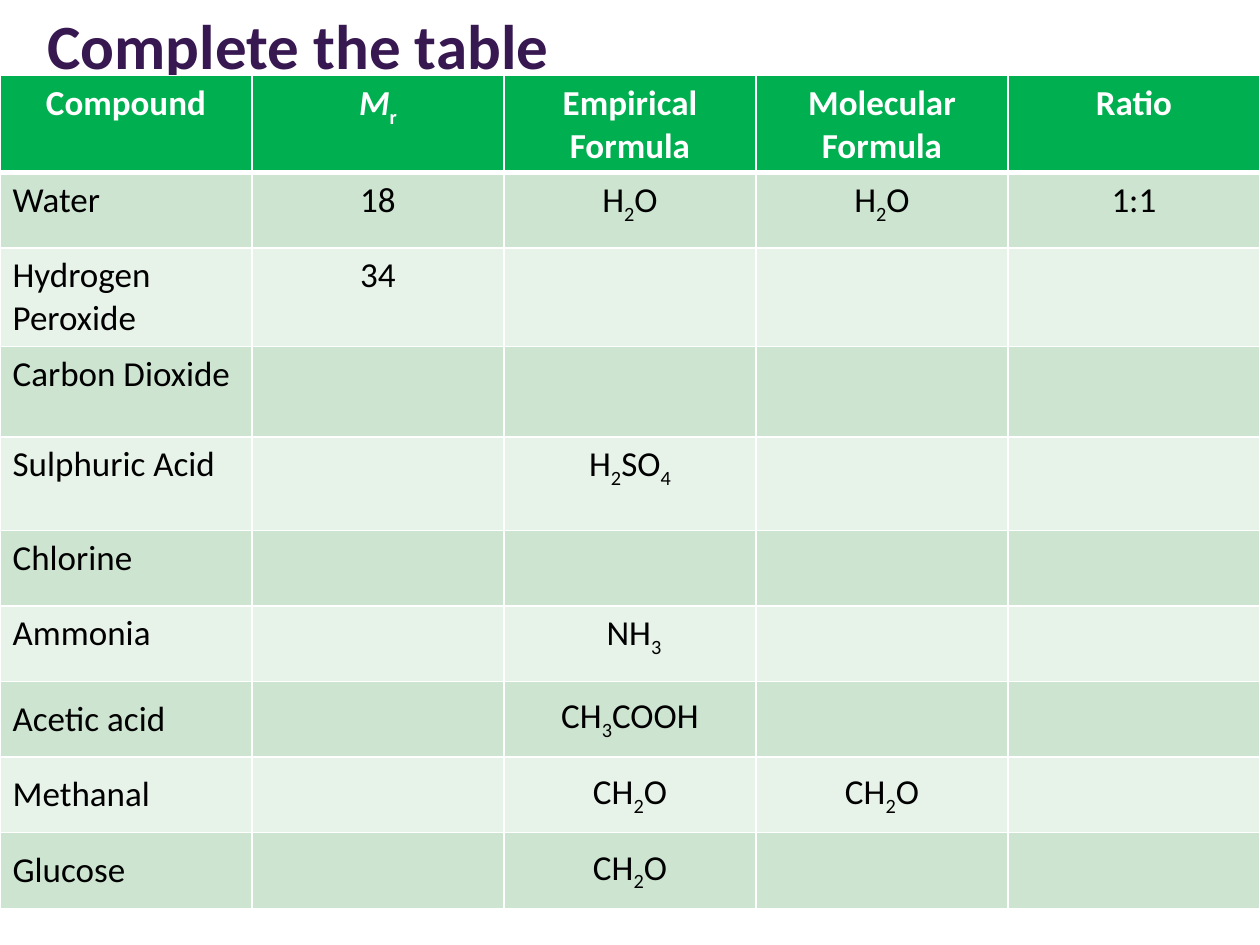
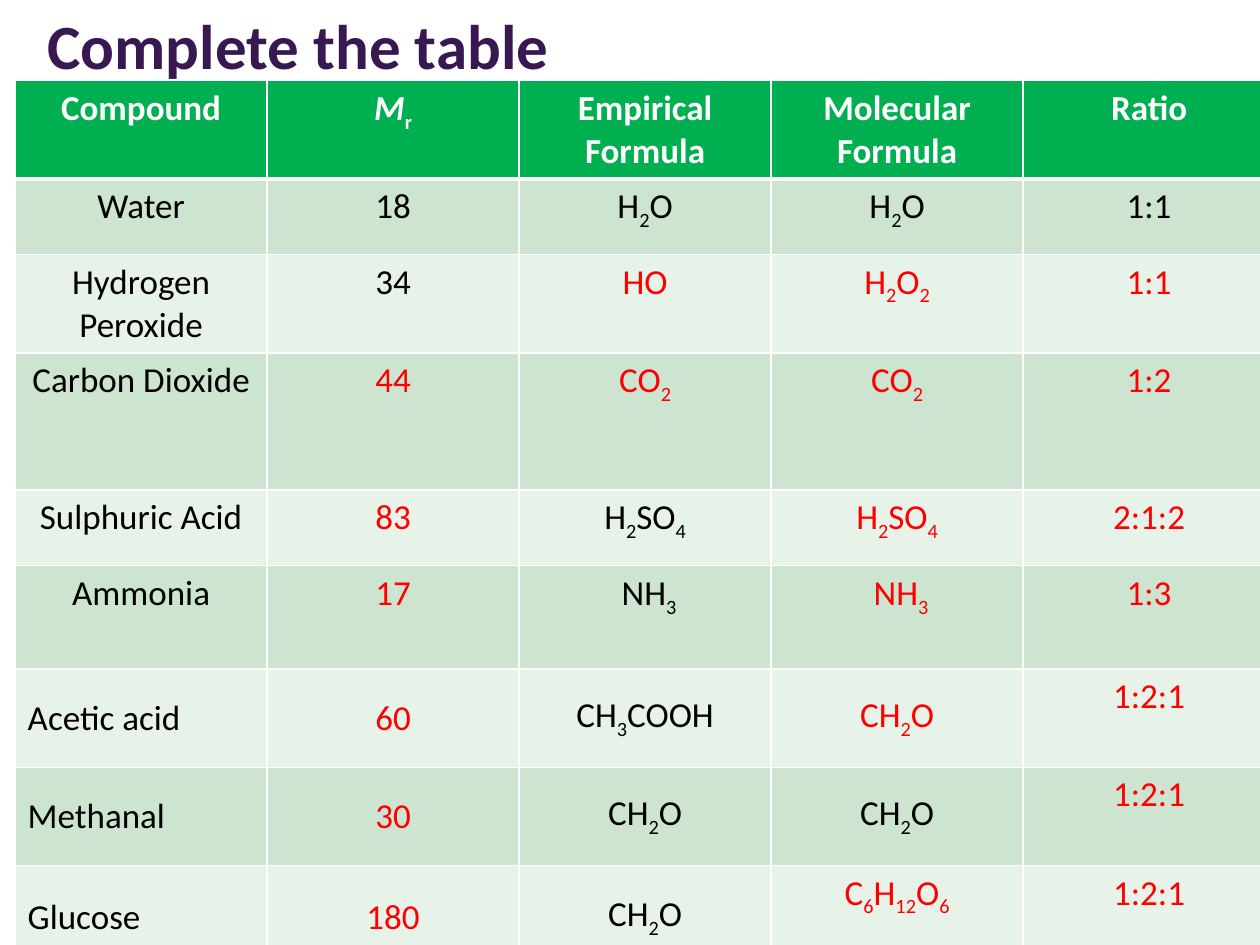
from pptx import Presentation
from pptx.dml.color import RGBColor
from pptx.enum.text import MSO_ANCHOR as Anchor, PP_ALIGN as Align
from pptx.oxml.ns import qn
from pptx.util import Inches, Pt
from lxml.etree import SubElement

# Shared look; lengths are in grid units, 10 columns by 7.5 rows of one inch
GRID_COLUMNS, GRID_ROWS = 10, 7.5
FONT = "Calibri"
WHITE, BLACK, ANSWER_RED = "FFFFFF", "000000", "FF0000"
TITLE_PURPLE, HEADER_GREEN = "381850", "00B050"
BAND_FILLS = ("CCE4D0", "E7F2E9")
TITLE_BOX = (0.28, 0, 9, 0.7)
THIN_LINE, HEADER_LINE = 1, 3

# Between underscores is subscript; a leading * marks an answer
HEADERS = ("Compound", "M_r", "Empirical Formula", "Molecular Formula", "Ratio")
NAME, MASS, EMPIRICAL, MOLECULAR, RATIO = range(5)
COMPOUNDS = {
    "Water": ("18", "H_2_O", "H_2_O", "1:1"),
    "Hydrogen Peroxide": ("34", "*HO", "*H_2_O_2", "*1:1"),
    "Carbon Dioxide": ("*44", "*CO_2", "*CO_2", "*1:2"),
    "Sulphuric Acid": ("*83", "H_2_SO_4", "*H_2_SO_4", "*2:1:2"),
    "Chlorine": ("", "", "", ""),
    "Ammonia": ("*17", " NH_3", "* NH_3", "*1:3"),
    "Acetic acid": ("*60", "CH_3_COOH", "*CH_2_O", "*1:2:1"),
    "Methanal": ("*30", "CH_2_O", "CH_2_O", "*1:2:1"),
    "Glucose": ("*180", "CH_2_O", "*C_6_H_12_O_6", "*1:2:1"),
}
ORGANIC = ("Acetic acid", "Methanal", "Glucose")

# Row heights by compound, header first
QUESTION_ROWS = {
    "header": 0.77, "Water": 0.6, "Hydrogen Peroxide": 0.78,
    "Carbon Dioxide": 0.72, "Sulphuric Acid": 0.74, "Chlorine": 0.6,
    "Ammonia": 0.6, "Acetic acid": 0.6, "Methanal": 0.6, "Glucose": 0.6,
}
ANSWER_ROWS = {
    "header": 0.78, "Water": 0.6, "Hydrogen Peroxide": 0.78,
    "Carbon Dioxide": 1.09, "Sulphuric Acid": 0.6, "Ammonia": 0.82,
    "Acetic acid": 0.78, "Methanal": 0.78, "Glucose": 0.82,
}


def color(hex_string):
    return RGBColor.from_string(hex_string)


def set_values(target, values):
    for name, value in values.items():
        setattr(target, name, value)


def write(paragraph, text, size, hex_string, bold=False, align=Align.LEFT):
    """Fill a paragraph, lowering every second part of the marked text."""
    paragraph.alignment = align
    for index, part in enumerate(text.split("_")):
        if not part:
            continue
        run = paragraph.add_run()
        run.text = part
        set_values(run.font, {"name": FONT, "size": Pt(size), "bold": bold})
        run.font.color.rgb = color(hex_string)
        if index % 2:
            run._r.get_or_add_rPr().set("baseline", "-25000")


def add_title(slide, text, box):
    shape = slide.shapes.add_textbox(*map(Inches, box))
    set_values(shape.text_frame,
               {"word_wrap": True, "vertical_anchor": Anchor.MIDDLE})
    write(shape.text_frame.paragraphs[0], text, 36, TITLE_PURPLE, bold=True)


def paint_cell(cell, fill, top, bottom):
    """White borders first, then the fill, as the cell schema orders them."""
    properties = cell._tc.get_or_add_tcPr()
    sides = {"a:lnL": THIN_LINE, "a:lnR": THIN_LINE, "a:lnT": top, "a:lnB": bottom}
    for side, width in sides.items():
        line = SubElement(properties, qn(side), w=str(Pt(width)))
        solid = SubElement(line, qn("a:solidFill"))
        SubElement(solid, qn("a:srgbClr"), val=WHITE)
    cell.fill.solid()
    cell.fill.fore_color.rgb = color(fill)


def fill_header(table):
    for column, text in enumerate(HEADERS):
        cell = table.cell(0, column)
        paint_cell(cell, HEADER_GREEN, THIN_LINE, HEADER_LINE)
        paragraph = cell.text_frame.paragraphs[0]
        write(paragraph, text, 20, WHITE, bold=True, align=Align.CENTER)
        if column == MASS:
            paragraph.runs[0].font.italic = True


def fill_compound(table, row, name, show_answers):
    top = HEADER_LINE if row == 1 else THIN_LINE
    for column, text in enumerate((name, *COMPOUNDS[name])):
        cell = table.cell(row, column)
        paint_cell(cell, BAND_FILLS[(row - 1) % 2], top, THIN_LINE)
        is_answer = text.startswith("*")
        if is_answer and not show_answers:
            continue
        raised = column == RATIO or (name == "Glucose" and column == MOLECULAR)
        if name in ORGANIC and not raised:
            cell.vertical_anchor = Anchor.MIDDLE
        left = column == NAME and (name in ORGANIC or not show_answers)
        write(cell.text_frame.paragraphs[0], text.lstrip("*"), 20,
              ANSWER_RED if is_answer else BLACK,
              align=Align.LEFT if left else Align.CENTER)


def add_compound_table(slide, left, top, row_heights, show_answers):
    box = (left, top, GRID_COLUMNS, sum(row_heights.values()))
    table = slide.shapes.add_table(
        len(row_heights), len(HEADERS), *map(Inches, box)).table
    set_values(table, {"first_row": False, "horz_banding": False})
    for row, height in zip(table.rows, row_heights.values()):
        row.height = Inches(height)
    fill_header(table)
    for row, name in enumerate(list(row_heights)[1:], start=1):
        fill_compound(table, row, name, show_answers)


def add_table_slide(presentation, left, top, row_heights, show_answers):
    slide = presentation.slides.add_slide(presentation.slide_layouts[6])
    add_title(slide, "Complete the table", TITLE_BOX)
    add_compound_table(slide, left, top, row_heights, show_answers)


def main():
    presentation = Presentation()
    set_values(presentation, {"slide_width": Inches(GRID_COLUMNS),
                              "slide_height": Inches(GRID_ROWS)})
    add_table_slide(presentation, 0, 0.6, QUESTION_ROWS, show_answers=False)
    add_table_slide(presentation, 0.12, 0.64, ANSWER_ROWS, show_answers=True)
    presentation.save("out.pptx")


if __name__ == "__main__":
    main()
